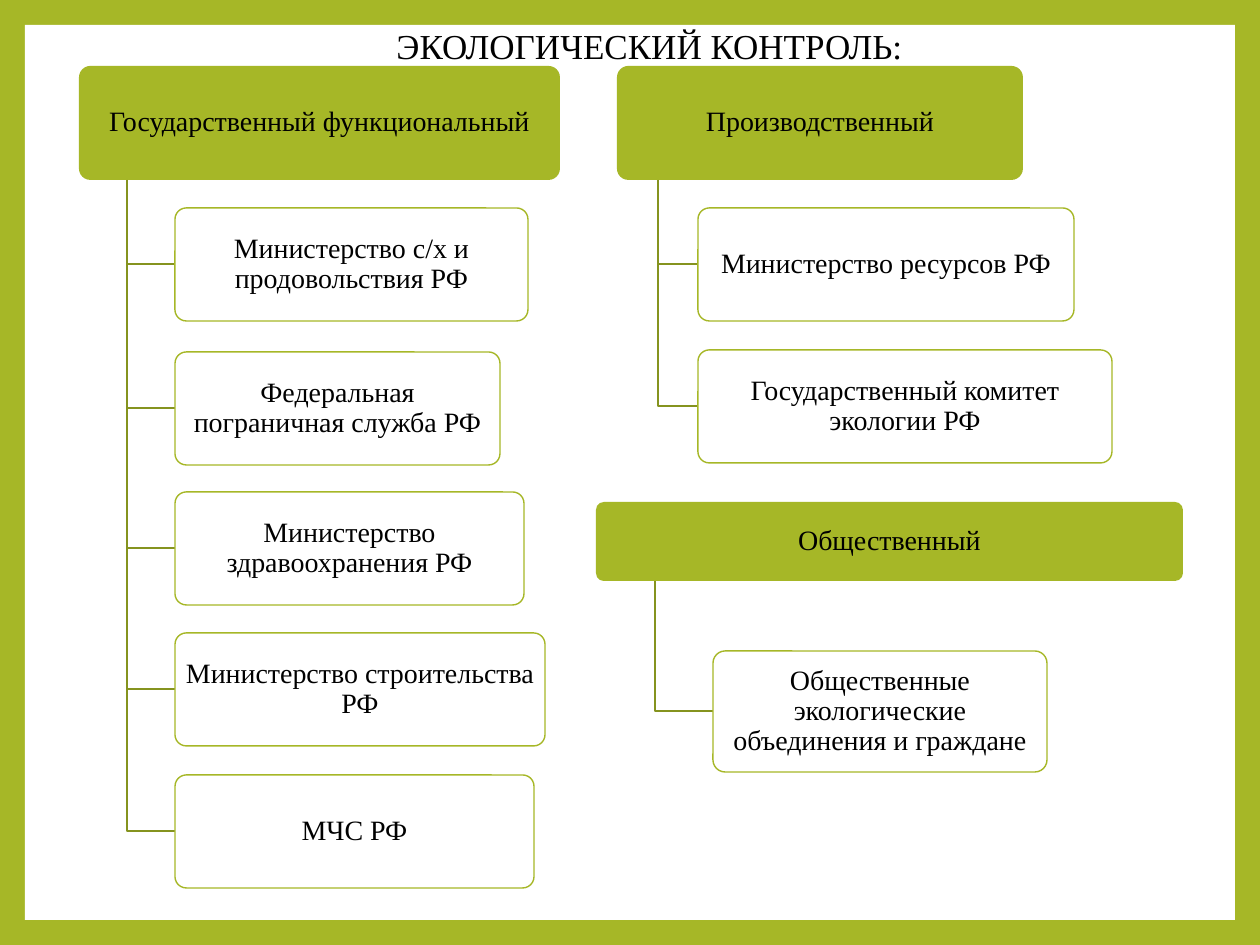
from dataclasses import dataclass

from lxml import etree
from pptx import Presentation
from pptx.dml.color import RGBColor
from pptx.enum.shapes import MSO_SHAPE
from pptx.enum.text import MSO_ANCHOR, PP_ALIGN
from pptx.oxml.ns import qn
from pptx.util import Pt

PX = 914400 // 126
RECT = MSO_SHAPE.RECTANGLE
ROUND = MSO_SHAPE.ROUNDED_RECTANGLE
MIDDLE = MSO_ANCHOR.MIDDLE
CENTER = PP_ALIGN.CENTER
FONT = "Times New Roman"
GREEN, OLIVE, WHITE, BLACK = "A6B727", "85931F", "FFFFFF", "000000"


@dataclass
class Kid:
    text: str
    top: int
    width: int


@dataclass
class Branch:
    text: str
    left: int
    top: int
    width: int
    height: int
    kid_high: int
    kids: list[Kid]


BRANCHES = [
    Branch("Государственный функциональный", 79, 66, 481, 114, 113, [
        Kid("Министерство с/х и продовольствия РФ", 208, 353),
        Kid("Федеральная пограничная служба РФ", 352, 325),
        Kid("Министерство здравоохранения РФ", 492, 349),
        Kid("Министерство строительства РФ", 633, 370),
        Kid("МЧС РФ", 775, 359),
    ]),
    Branch("Производственный", 617, 66, 406, 114, 113, [
        Kid("Министерство ресурсов РФ", 208, 376),
        Kid("Государственный комитет экологии РФ", 350, 414),
    ]),
    Branch("Общественный", 596, 502, 587, 79, 121, [
        Kid("Общественные экологические объединения и граждане", 651, 334),
    ]),
]


def color(code: str) -> RGBColor:
    return RGBColor.from_string(code)


def paint(shape, code: str) -> None:
    shape.shadow.inherit = False
    shape.fill.solid()
    shape.fill.fore_color.rgb = color(code)
    shape.line.fill.background()


def write(shape, text: str, size: int) -> None:
    frame = shape.text_frame
    frame.word_wrap = True
    frame.vertical_anchor = MIDDLE
    para = frame.paragraphs[0]
    para.text = text
    para.alignment = CENTER
    para.line_spacing = 0.9
    para.font.name = FONT
    para.font.size = Pt(size)
    para.font.color.rgb = color(BLACK)


def add_box(slide, text: str, left: int, top: int, width: int, height: int,
            fill: str):
    box = slide.shapes.add_shape(
        ROUND, left * PX, top * PX, width * PX, height * PX)
    box.adjustments[0] = 0.1
    paint(box, fill)
    write(box, text, 16)
    frame = box.text_frame
    frame.margin_left = frame.margin_right = 4 * PX
    frame.margin_top = frame.margin_bottom = 3 * PX
    return box


def add_elbow(slide, left: int, top: int, right: int, bottom: int) -> None:
    pen = slide.shapes.build_freeform(left, top, scale=PX)
    pen.add_line_segments([(left, bottom), (right, bottom)], close=False)
    elbow = pen.convert_to_shape()
    elbow.shadow.inherit = False
    elbow.fill.background()
    elbow.line.color.rgb = color(OLIVE)
    elbow.line.width = Pt(1.5)


def add_branch(slide, branch: Branch) -> None:
    """Draw a head, its stem at a tenth of its width and its kids at a fifth."""
    add_box(slide, branch.text, branch.left, branch.top, branch.width,
            branch.height, GREEN)
    stem = branch.left + round(branch.width / 10)
    left = branch.left + round(branch.width / 5)
    for kid in branch.kids:
        add_elbow(slide, stem, branch.top + branch.height, left,
                  kid.top + round(branch.kid_high / 2))
        box = add_box(slide, kid.text, left, kid.top, kid.width,
                      branch.kid_high, WHITE)
        box.line.color.rgb = color(GREEN)
        box.line.width = Pt(0.79)
        tint = box.fill._xPr.find(qn("a:solidFill"))[0]
        etree.SubElement(tint, qn("a:alpha"), val="90000")


def main() -> None:
    deck = Presentation()
    deck.slide_width, deck.slide_height = 1260 * PX, 945 * PX
    slide = deck.slides.add_slide(deck.slide_layouts[5])
    slide.background.fill.solid()
    slide.background.fill.fore_color.rgb = color(GREEN)

    title = slide.shapes.title
    title.left, title.top = 64 * PX, 0
    title.width, title.height = 1171 * PX, 97 * PX
    write(title, "ЭКОЛОГИЧЕСКИЙ КОНТРОЛЬ:", 20)

    sheet = slide.shapes.add_shape(RECT, 25 * PX, 25 * PX, 1210 * PX, 895 * PX)
    paint(sheet, WHITE)
    title.element.addprevious(sheet.element)

    for branch in BRANCHES:
        add_branch(slide, branch)
    deck.save("out.pptx")


if __name__ == "__main__":
    main()
